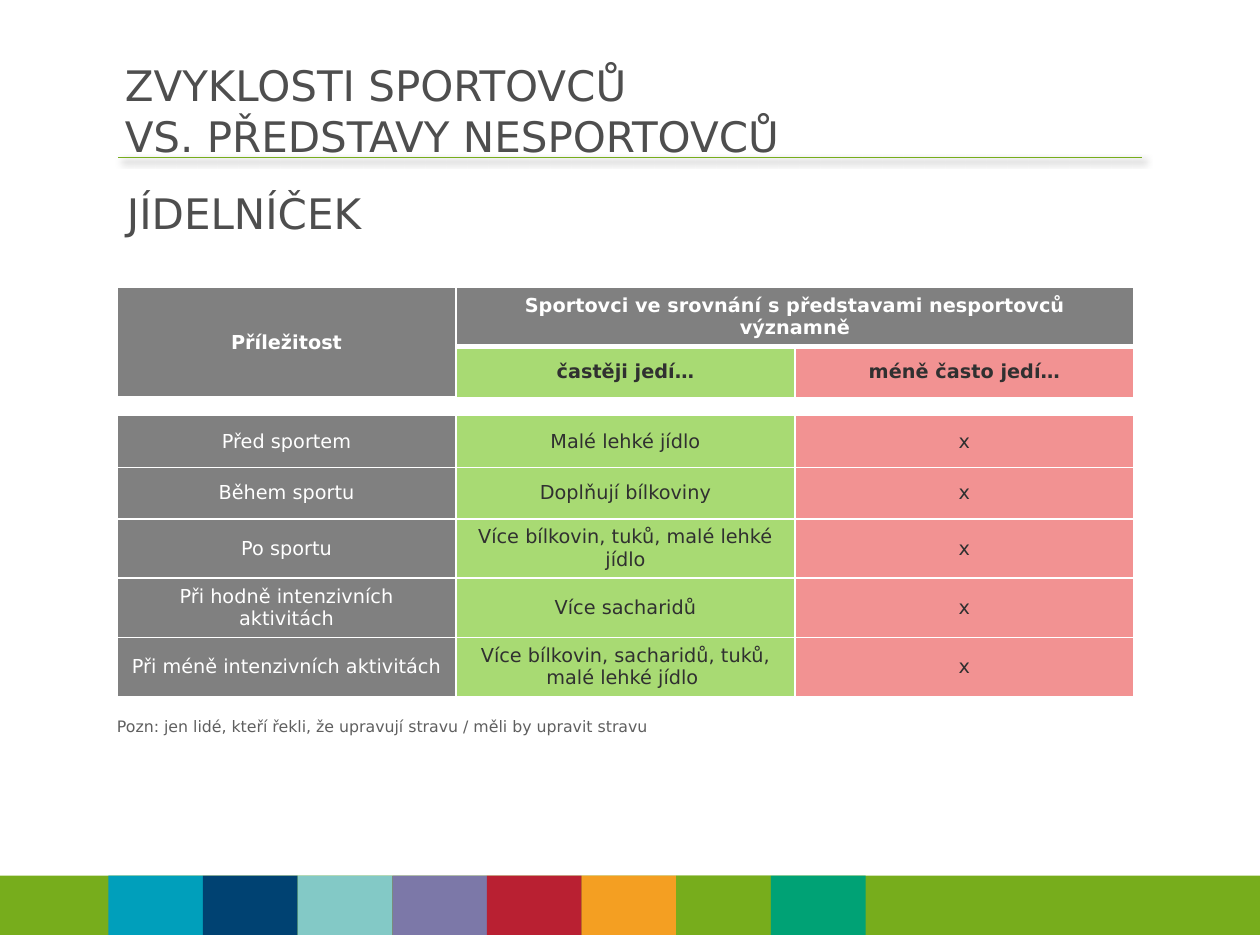
from dataclasses import dataclass

from lxml import etree
from pptx import Presentation
from pptx.dml.color import RGBColor
from pptx.enum.shapes import MSO_CONNECTOR, MSO_SHAPE
from pptx.enum.text import MSO_ANCHOR, MSO_AUTO_SIZE, PP_ALIGN
from pptx.oxml import parse_xml
from pptx.oxml.ns import nsdecls, qn
from pptx.util import Inches, Pt

RECTANGLE = MSO_SHAPE.RECTANGLE
STRAIGHT = MSO_CONNECTOR.STRAIGHT
MIDDLE = MSO_ANCHOR.MIDDLE
LEFT = PP_ALIGN.LEFT
CENTER = PP_ALIGN.CENTER
NO_AUTOFIT = MSO_AUTO_SIZE.NONE

FONT = "DejaVu Sans"
WHITE, GRAY, DARK = "FFFFFF", "808080", "303030"
GREEN, RED, ACCENT = "A8DA73", "F29292", "77AD1C"
HEADING, NOTE = "4E4E4E", "5F5F5F"

BAND_TOP, BAND_HEIGHT = 6.95, 0.47
BAND_LEFT, BAND_RIGHT = 0.86, 6.87
BAND_COLORS = ["009FBB", "004272", "83C9C6", "7C78A8",
               "B92032", "F49F22", ACCENT, "00A275"]

COLUMN_WIDTH = 2.69
ROW_HEIGHTS = [0.47, 0.41, 0.14, 0.41, 0.41, 0.47, 0.47, 0.47]
SPACER_ROW = 2
FIRST_BODY_ROW = 3
BODY_ROWS = [
    ("Před sportem", "Malé lehké jídlo", "x"),
    ("Během sportu", "Doplňují bílkoviny", "x"),
    ("Po sportu", "Více bílkovin, tuků, malé lehké jídlo", "x"),
    ("Při hodně intenzivních aktivitách", "Více sacharidů", "x"),
    ("Při méně intenzivních aktivitách",
     "Více bílkovin, sacharidů, tuků, malé lehké jídlo ", "x"),
]
BODY_STYLES = [(GRAY, WHITE), (GREEN, DARK), (RED, DARK)]


@dataclass
class TableEntry:
    row: int
    column: int
    lines: list[str]
    fill: str
    color: str
    bold: bool = False
    bottom: float = 1


def color_of(value: str) -> RGBColor:
    return RGBColor.from_string(value)


def add_span(para, text: str, size: float, color: str, bold: bool = False) -> None:
    span = para.add_run()
    span.text = text
    span.font.name = FONT
    span.font.size = Pt(size)
    span.font.bold = bold
    span.font.color.rgb = color_of(color)


def add_band(page, left: float, width: float, color: str) -> None:
    band = page.shapes.add_shape(RECTANGLE, Inches(left), Inches(BAND_TOP),
                                 Inches(width), Inches(BAND_HEIGHT))
    band.shadow.inherit = False
    band.fill.solid()
    band.fill.fore_color.rgb = color_of(color)
    band.line.fill.background()


def add_title_rule(page) -> None:
    rule = page.shapes.add_connector(STRAIGHT, Inches(0.94), Inches(1.25),
                                     Inches(9.06), Inches(1.25))
    rule.line.color.rgb = color_of(ACCENT)
    rule.line.width = Pt(0.75)
    rule._element.spPr.append(parse_xml(
        f'<a:effectLst {nsdecls("a")}><a:outerShdw blurRad="{Pt(4)}" dist="{Pt(3)}" '
        f'dir="{45 * 60000}"><a:srgbClr val="000000"><a:alpha val="40000"/>'
        '</a:srgbClr></a:outerShdw></a:effectLst>'))


def write_heading(box, left: float, top: float, lines: list[str]) -> None:
    box.left, box.top = Inches(left), Inches(top)
    box.width, box.height = Inches(8.87), Inches(0.51)
    frame = box.text_frame
    frame.word_wrap = True
    frame.auto_size = NO_AUTOFIT
    frame.vertical_anchor = MIDDLE
    para = frame.paragraphs[0]
    para.alignment = LEFT
    para.space_before = Pt(0)
    para.space_after = Pt(3)
    for index, line in enumerate(lines):
        if index:
            para.add_line_break()
        add_span(para, line, 24, HEADING)


def set_borders(cell, bottom: float) -> None:
    properties = cell._tc.get_or_add_tcPr()
    widths = {"lnL": 1, "lnR": 1, "lnT": 1, "lnB": bottom}
    for index, (side, width) in enumerate(widths.items()):
        properties.insert(index, parse_xml(
            f'<a:{side} {nsdecls("a")} w="{Pt(width)}"><a:solidFill>'
            f'<a:srgbClr val="{WHITE}"/></a:solidFill></a:{side}>'))


def write_cell(table, entry: TableEntry) -> None:
    cell = table.cell(entry.row, entry.column)
    cell.fill.solid()
    cell.fill.fore_color.rgb = color_of(entry.fill)
    cell.vertical_anchor = MIDDLE
    frame = cell.text_frame
    for index, line in enumerate(entry.lines):
        para = frame.add_paragraph() if index else frame.paragraphs[0]
        para.alignment = CENTER
        add_span(para, line, 11, entry.color, entry.bold)


def shrink_spacer(cell) -> None:
    cell.fill.background()
    cell.margin_top = cell.margin_bottom = 0
    para = cell.text_frame.paragraphs[0]
    etree.SubElement(para._p, qn("a:endParaRPr"), sz="600")


def add_habits_table(page) -> None:
    frame = page.shapes.add_table(len(ROW_HEIGHTS), 3, Inches(0.93), Inches(2.28),
                                  Inches(3 * COLUMN_WIDTH), Inches(sum(ROW_HEIGHTS)))
    table = frame.table
    table.first_row = table.horz_banding = False
    for column in table.columns:
        column.width = Inches(COLUMN_WIDTH)
    for row, height in zip(table.rows, ROW_HEIGHTS):
        row.height = Inches(height)
    table.cell(0, 0).merge(table.cell(1, 0))
    table.cell(0, 1).merge(table.cell(0, 2))

    entries = [
        TableEntry(0, 0, ["Příležitost"], GRAY, WHITE, True, 3),
        TableEntry(0, 1, ["Sportovci ve srovnání s představami nesportovců",
                          "významně"], GRAY, WHITE, True, 3),
        TableEntry(1, 1, ["častěji jedí…"], GREEN, DARK, True),
        TableEntry(1, 2, ["méně často jedí…"], RED, DARK, True),
    ]
    for row, texts in enumerate(BODY_ROWS, FIRST_BODY_ROW):
        for column, (text, style) in enumerate(zip(texts, BODY_STYLES)):
            entries.append(TableEntry(row, column, [text], *style))
    for entry in entries:
        write_cell(table, entry)
    for column in range(3):
        shrink_spacer(table.cell(SPACER_ROW, column))
    bottoms = {(entry.row, entry.column): entry.bottom for entry in entries}
    bottoms[0, 2] = 3
    for row in range(len(ROW_HEIGHTS)):
        for column in range(3):
            set_borders(table.cell(row, column), bottoms.get((row, column), 1))


def add_note(page) -> None:
    box = page.shapes.add_textbox(Inches(0.83), Inches(5.64), Inches(4.62), Inches(0.25))
    box.text_frame.word_wrap = False
    add_span(box.text_frame.paragraphs[0],
             "Pozn: jen lidé, kteří řekli, že upravují stravu / měli by upravit stravu",
             9, NOTE)


def main() -> None:
    deck = Presentation()
    deck.slide_width, deck.slide_height = Inches(10), Inches(7.5)
    page = deck.slides.add_slide(deck.slide_layouts[5])

    add_title_rule(page)
    add_band(page, 0, 10, ACCENT)
    band_width = (BAND_RIGHT - BAND_LEFT) / len(BAND_COLORS)
    for index, color in enumerate(BAND_COLORS):
        add_band(page, BAND_LEFT + index * band_width, band_width, color)

    write_heading(page.shapes.title, 0.89, 0.62,
                  ["ZVYKLOSTI SPORTOVCŮ ", "VS. PŘEDSTAVY NESPORTOVCŮ"])
    add_habits_table(page)
    add_note(page)
    subtitle = page.shapes.add_textbox(0, 0, 0, 0)
    write_heading(subtitle, 0.91, 1.43, ["JÍDELNÍČEK"])
    deck.save("out.pptx")


if __name__ == "__main__":
    main()
